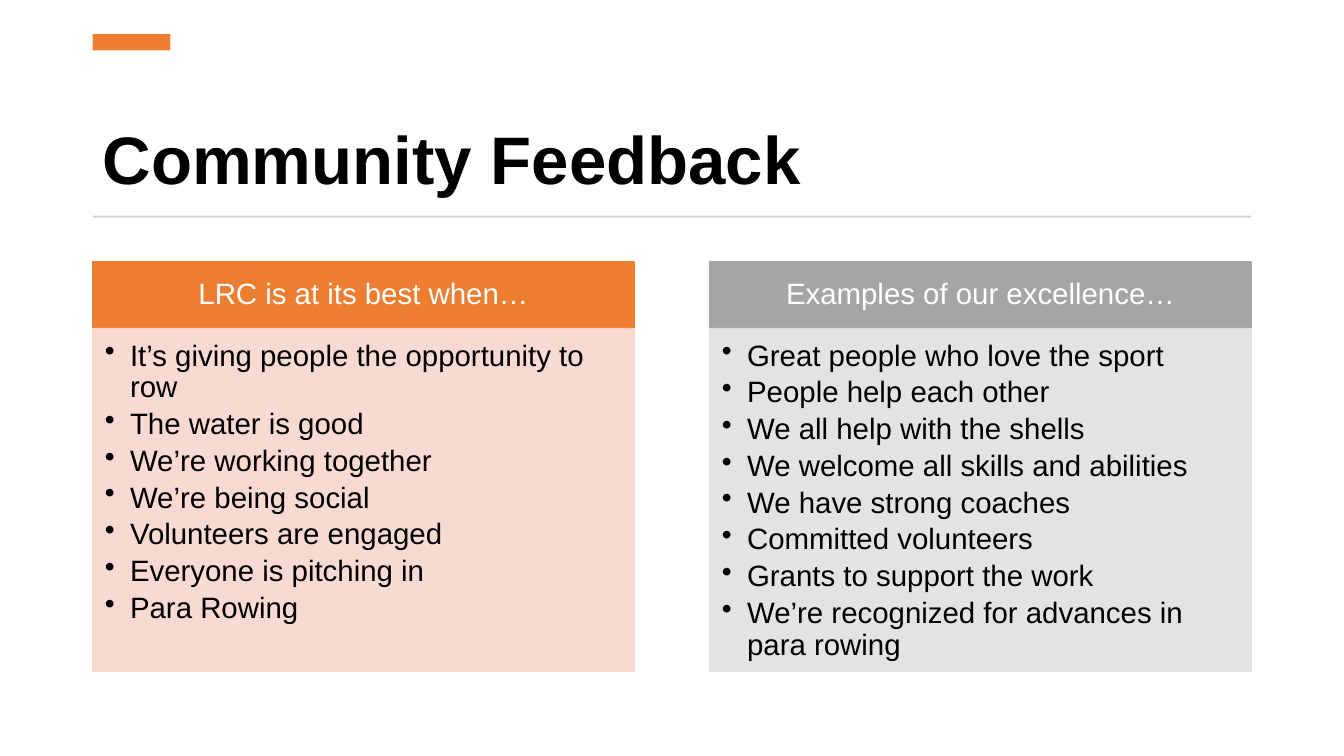
from lxml import etree
from pptx import Presentation
from pptx.dml.color import RGBColor
from pptx.enum.shapes import MSO_SHAPE as SHAPE
from pptx.enum.text import MSO_ANCHOR as ANCHOR, PP_ALIGN as ALIGN
from pptx.oxml.ns import qn
from pptx.util import Inches, Pt

# Content
TITLE = "Community Feedback"
COLUMNS = [
    ("LRC is at its best when…", [
        "It’s giving people the opportunity to row",
        "The water is good",
        "We’re working together",
        "We’re being social",
        "Volunteers are engaged",
        "Everyone is pitching in",
        "Para Rowing",
    ]),
    ("Examples of our excellence…", [
        "Great people who love the sport",
        "People help each other",
        "We all help with the shells",
        "We welcome all skills and abilities",
        "We have strong coaches",
        "Committed volunteers",
        "Grants to support the work",
        "We’re recognized for advances in para rowing",
    ]),
]

# Colours: header and body of each column
ORANGE = RGBColor(0xED, 0x7D, 0x31)
PEACH = RGBColor(0xF8, 0xD7, 0xCE)
GRAY = RGBColor(0xA5, 0xA5, 0xA5)
PALE_GRAY = RGBColor(0xE1, 0xE1, 0xE1)
RULE_GRAY = RGBColor(0xD5, 0xD5, 0xD5)
BLACK = RGBColor(0, 0, 0)
WHITE = RGBColor(0xFF, 0xFF, 0xFF)
PALETTE = [(ORANGE, PEACH), (GRAY, PALE_GRAY)]

# Layout in inches
LEFT, WIDTH = 0.92, 11.49
COL_W, COL_TOP = 5.37, 2.6
COL_STEP = WIDTH - COL_W
HEAD_H, BODY_H = 0.66, 3.4
INDENT = 0.25


def add_rect(s, x, y, w, h, color, outlined=False, alpha=None):
    sp = s.shapes.add_shape(SHAPE.RECTANGLE, Inches(x), Inches(y), Inches(w), Inches(h))
    sp.shadow.inherit = False
    sp.fill.solid()
    sp.fill.fore_color.rgb = color
    if outlined:
        sp.line.color.rgb = color
        sp.line.width = Pt(1)
    else:
        sp.line.fill.background()
    if alpha:
        for clr in sp._element.spPr.iter(qn("a:srgbClr")):
            etree.SubElement(clr, qn("a:alpha")).set("val", str(alpha * 1000))
    return sp


def set_text(sp, lines, size, color, anchor, margins, align=ALIGN.LEFT,
             bold=False, after=0, bulleted=False):
    tf = sp.text_frame
    tf.word_wrap = True
    tf.vertical_anchor = anchor
    tf.margin_left, tf.margin_top, tf.margin_right, tf.margin_bottom = map(Inches, margins)
    for i, line in enumerate(lines):
        p = tf.paragraphs[0] if i == 0 else tf.add_paragraph()
        p.text = line
        p.alignment = align
        p.line_spacing = 0.9
        p.space_after = Pt(after)
        p.font.name, p.font.size, p.font.bold = "Arial", Pt(size), bold
        p.font.color.rgb = color
        if bulleted:
            pPr = p._p.get_or_add_pPr()
            pPr.set("marL", str(Inches(INDENT)))
            pPr.set("indent", str(-Inches(INDENT)))
            bullet = etree.Element(qn("a:buChar"), char="•")
            pPr.find(qn("a:defRPr")).addprevious(bullet)


prs = Presentation()
prs.slide_width, prs.slide_height = Inches(13.33), Inches(7.5)
s = prs.slides.add_slide(prs.slide_layouts[6])

# Title with accent bar and rule
title = s.shapes.add_textbox(Inches(LEFT), Inches(0.75), Inches(WIDTH), Inches(1.27))
set_text(title, [TITLE], 48, BLACK, ANCHOR.BOTTOM, (0.1, 0.05, 0.1, 0.05), bold=True)
add_rect(s, LEFT, 0.34, 0.77, 0.16, ORANGE)
add_rect(s, LEFT, 2.14, WIDTH, 0.02, RULE_GRAY)

# Two columns: header over bulleted body
for i, ((heading, points), (dark, light)) in enumerate(zip(COLUMNS, PALETTE)):
    x = LEFT + i * COL_STEP
    head = add_rect(s, x, COL_TOP, COL_W, HEAD_H, dark, outlined=True)
    set_text(head, [heading], 21, WHITE, ANCHOR.MIDDLE, (0.16, 0.09, 0.16, 0.09),
             align=ALIGN.CENTER)
    body = add_rect(s, x, COL_TOP + HEAD_H, COL_W, BODY_H, light, outlined=True, alpha=90)
    set_text(body, points, 21, BLACK, ANCHOR.TOP, (0.12, 0.12, 0.16, 0.18),
             after=3.6, bulleted=True)

prs.save("out.pptx")
